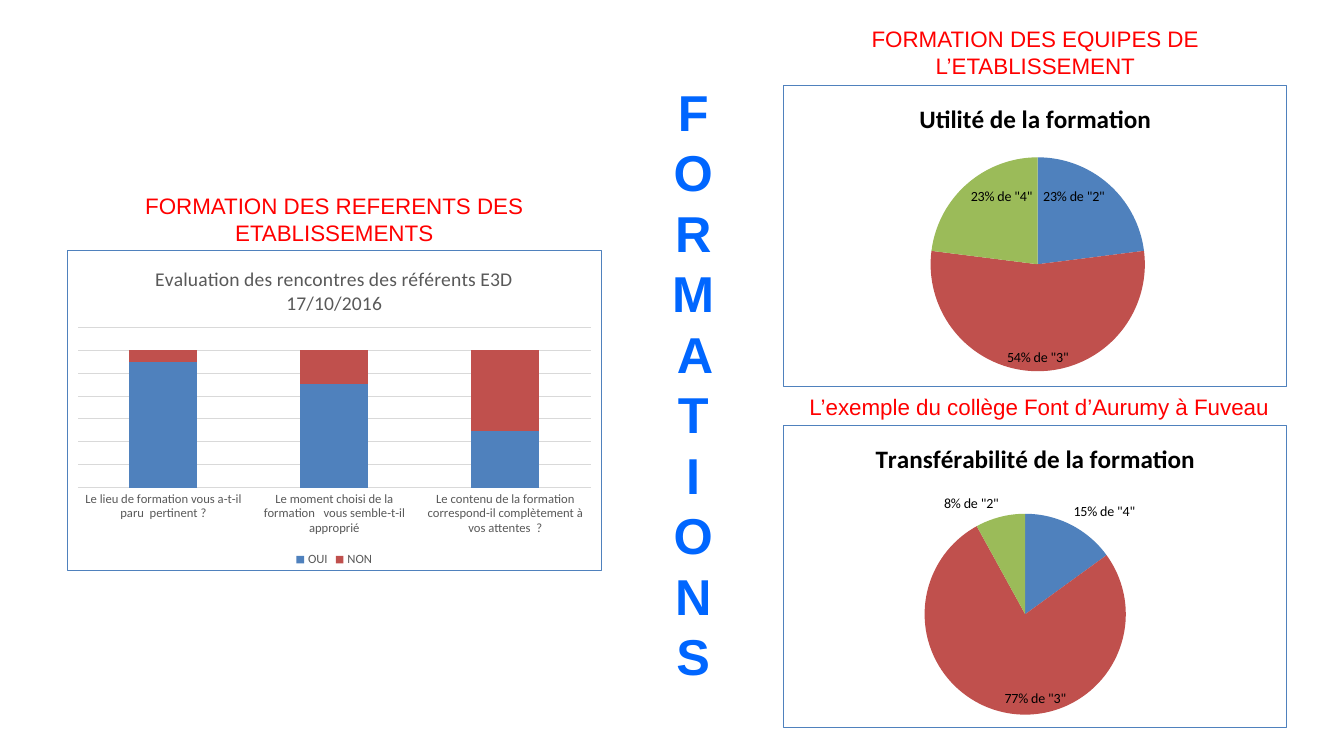
from lxml import etree
from pptx import Presentation
from pptx.chart.data import CategoryChartData
from pptx.dml.color import RGBColor
from pptx.enum.chart import XL_CHART_TYPE, XL_LABEL_POSITION, XL_LEGEND_POSITION, XL_TICK_MARK
from pptx.enum.text import PP_ALIGN
from pptx.oxml import parse_xml
from pptx.oxml.ns import nsdecls, qn
from pptx.util import Cm, Pt

STACKED = XL_CHART_TYPE.COLUMN_STACKED
PIE = XL_CHART_TYPE.PIE
INSIDE = XL_LABEL_POSITION.INSIDE_END
OUTSIDE = XL_LABEL_POSITION.OUTSIDE_END
BOTTOM = XL_LEGEND_POSITION.BOTTOM
NO_TICK = XL_TICK_MARK.NONE
CENTER = PP_ALIGN.CENTER

RED = RGBColor(0xFF, 0x00, 0x00)
BRIGHT_BLUE = RGBColor(0x00, 0x66, 0xFF)
BLACK = RGBColor(0x00, 0x00, 0x00)
GREY = RGBColor(0x59, 0x59, 0x59)
LIGHT_GREY = RGBColor(0xD9, 0xD9, 0xD9)
BLUE = RGBColor(0x4F, 0x81, 0xBD)
BRICK = RGBColor(0xC0, 0x50, 0x4D)
GREEN = RGBColor(0x9B, 0xBB, 0x59)
PURPLE = RGBColor(0x80, 0x64, 0xA2)
PALETTE = (BLUE, BRICK, GREEN, PURPLE)


def style_font(font, name="Calibri", size=10, color=BLACK, bold=False):
    font.name = name
    font.size = Pt(size)
    font.bold = bold
    font.color.rgb = color


def write(text_frame, text, **style):
    text_frame.text = text
    for paragraph in text_frame.paragraphs:
        paragraph.alignment = CENTER
        for run in paragraph.runs:
            style_font(run.font, **style)


def style_line(line, color):
    line.color.rgb = color
    line.width = Pt(0.75)


class FormationSlide:
    text_font = "Arial"

    def __init__(self, presentation):
        self.slide = presentation.slides.add_slide(presentation.slide_layouts[6])

    def text(self, text, left, top, width, height, size=16, color=RED, bold=False, stacked=False):
        shape = self.slide.shapes.add_textbox(Cm(left), Cm(top), Cm(width), Cm(height))
        text_frame = shape.text_frame
        text_frame.word_wrap = True
        write(text_frame, text, name=self.text_font, size=size, color=color, bold=bold)
        if stacked:
            shape.element.txBody.find(qn("a:bodyPr")).set("vert", "wordArtVert")

    def chart(self, kind, title, categories, series, frame, plot_area, **title_style):
        data = CategoryChartData()
        data.categories = categories
        for name, values in series.items():
            data.add_series(name, values)
        lengths = [Cm(length) for length in frame]
        chart = self.slide.shapes.add_chart(kind, *lengths, data).chart
        style_font(chart.font)
        chart.has_legend = False
        chart.has_title = True
        write(chart.chart_title.text_frame, title, **title_style)
        chart.chart_title.include_in_layout = False
        self.border(chart)
        self.place_plot(chart, plot_area)
        return chart

    def border(self, chart):
        chart_space = chart._chartSpace
        chart_space.find(qn("c:chart")).addnext(parse_xml(
            f'<c:spPr {nsdecls("c", "a")}><a:solidFill><a:srgbClr val="FFFFFF"/></a:solidFill>'
            f'<a:ln w="9525"><a:solidFill><a:srgbClr val="{BLUE}"/></a:solidFill></a:ln></c:spPr>'))

    def place_plot(self, chart, plot_area):
        plot = chart._chartSpace.find(qn("c:chart")).find(qn("c:plotArea"))
        for layout in plot.findall(qn("c:layout")):
            plot.remove(layout)
        layout = etree.Element(qn("c:layout"))
        manual = etree.SubElement(layout, qn("c:manualLayout"))
        settings = [("layoutTarget", "inner"), ("xMode", "edge"), ("yMode", "edge")]
        for tag, value in settings + list(zip("xywh", plot_area)):
            etree.SubElement(manual, qn(f"c:{tag}")).set("val", str(value))
        plot.insert(0, layout)

    def columns(self, title, categories, series, frame, plot_area):
        chart = self.chart(STACKED, title, categories, series, frame, plot_area, size=14, color=GREY)
        plot = chart.plots[0]
        plot.vary_by_categories = False
        plot.overlap = 100
        plot.gap_width = 150
        for bars, color in zip(plot.series, PALETTE):
            bars.format.fill.solid()
            bars.format.fill.fore_color.rgb = color
        category_axis = chart.category_axis
        category_axis.major_tick_mark = NO_TICK
        style_font(category_axis.tick_labels.font, size=9, color=GREY)
        style_line(category_axis.format.line, LIGHT_GREY)
        value_axis = chart.value_axis
        value_axis.visible = False
        value_axis.minimum_scale = 0
        value_axis.major_unit = 18.2
        value_axis.maximum_scale = 7 * 18.2
        value_axis.has_major_gridlines = True
        style_line(value_axis.major_gridlines.format.line, LIGHT_GREY)
        chart.has_legend = True
        chart.legend.position = BOTTOM
        chart.legend.include_in_layout = False
        style_font(chart.legend.font, size=9, color=GREY)

    def pie(self, title, values, labels, frame, plot_area):
        categories = [str(number) for number in range(1, len(values) + 1)]
        chart = self.chart(PIE, title, categories, {"Series 1": values}, frame, plot_area,
                           size=18, bold=True)
        plot = chart.plots[0]
        plot.vary_by_categories = True
        points = plot.series[0].points
        for index, color in enumerate(PALETTE):
            fill = points[index].format.fill
            fill.solid()
            fill.fore_color.rgb = color
        for index, (text, position) in enumerate(labels):
            label = points[index].data_label
            write(label.text_frame, text)
            label.position = position


def main():
    presentation = Presentation()
    presentation.slide_width = Cm(33.87)
    presentation.slide_height = Cm(19.05)
    page = FormationSlide(presentation)

    page.columns(
        "Evaluation des rencontres des référents E3D\n17/10/2016",
        ["Le lieu de formation vous a-t-il paru  pertinent ?",
         "Le moment choisi de la formation   vous semble-t-il approprié",
         "Le contenu de la formation correspond-il complètement à vos attentes  ?"],
        {"OUI": (100, 82, 45), "NON": (9, 27, 64)},
        (1.68, 6.3, 13.49, 8.1), (0.02, 0.24, 0.96, 0.5))
    page.text("FORMATION DES REFERENTS DES ETABLISSEMENTS", 1.68, 4.72, 13.49, 1.63)
    page.pie("Utilité de la formation", (23, 54, 23, 0),
             [('23% de "2"', INSIDE), ('54% de "3"', INSIDE), ('23% de "4"', INSIDE)],
             (19.74, 2.13, 12.7, 7.62), (0.29, 0.24, 0.43, 0.71))
    page.text("FORMATIONS", 16.38, 0.48, 2.18, 18.36,
              size=36, color=BRIGHT_BLUE, bold=True, stacked=True)
    page.pie("Transférabilité de la formation", (15, 77, 8, 0),
             [('15% de "4"', OUTSIDE), ('77% de "3"', INSIDE), ('8% de "2"', OUTSIDE)],
             (19.74, 10.72, 12.7, 7.62), (0.28, 0.29, 0.4, 0.67))
    page.text("FORMATION DES EQUIPES DE L’ETABLISSEMENT", 19.74, 0.51, 12.7, 1.63)
    page.text("L’exemple du collège Font d’Aurumy à Fuveau", 19.84, 9.78, 12.7, 0.94)
    presentation.save("out.pptx")


if __name__ == "__main__":
    main()
